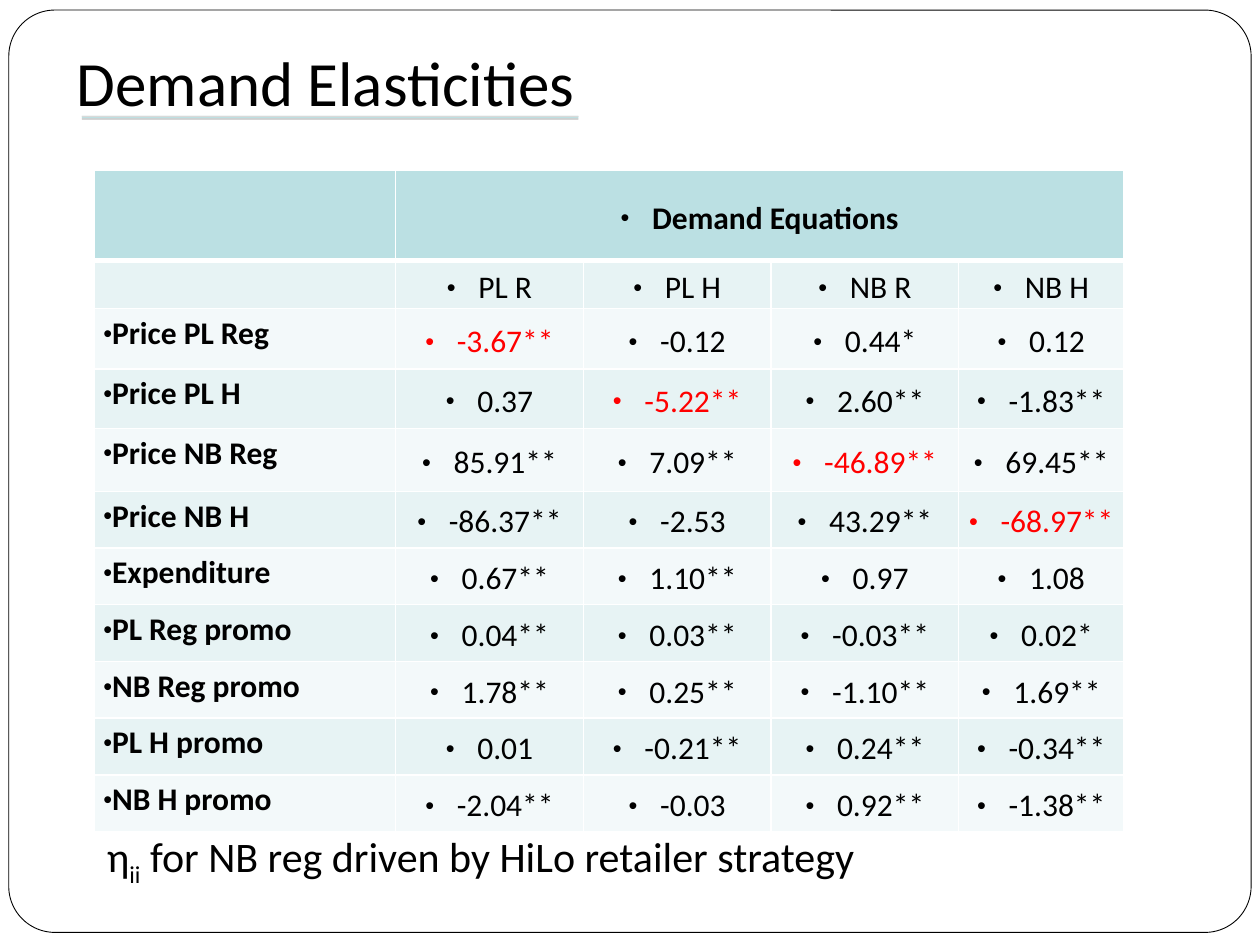
"""Build the Demand Elasticities slide."""
from lxml.etree import SubElement
from pptx import Presentation
from pptx.dml.color import RGBColor
from pptx.enum.shapes import MSO_SHAPE
from pptx.enum.text import MSO_ANCHOR, MSO_AUTO_SIZE, PP_ALIGN
from pptx.oxml.ns import qn
from pptx.util import Inches, Pt

COLORS = {"black": "000000", "white": "FFFFFF", "red": "FF0000", "head": "BBE0E3",
          "dark": "E7F3F4", "light": "F3F9FA", "gray": "D9D9D9", "shade": "BFBFBF"}
WIDTHS = [2.39, 1.49, 1.49, 1.49, 1.31]
HEIGHTS = [0.72, 0.38, 0.48, 0.47, 0.5] + [0.45] * 6
ROWS = [
    ["", "Demand Equations", "", "", ""],
    ["", "PL R", "PL H", "NB R", "NB H"],
    ["Price PL Reg", "-3.67**", "-0.12", "0.44*", "0.12"],
    ["Price PL H", "0.37", "-5.22**", "2.60**", "-1.83**"],
    ["Price NB Reg", "85.91**", "7.09**", "-46.89**", "69.45**"],
    ["Price NB H", "-86.37**", "-2.53", "43.29**", "-68.97**"],
    ["Expenditure", "0.67**", "1.10**", "0.97", "1.08"],
    ["PL Reg promo", "0.04**", "0.03**", "-0.03**", "0.02*"],
    ["NB Reg promo", "1.78**", "0.25**", "-1.10**", "1.69**"],
    ["PL H promo", "0.01", "-0.21**", "0.24**", "-0.34**"],
    ["NB H promo", "-2.04**", "-0.03", "0.92**", "-1.38**"],
]
BARS = [(0.92, 0.02, "head"), (0.92, 0.01, "gray"), (0.94, 0.01, "shade")]


def style(font, size, color="black", bold=False):
    font.name, font.size, font.bold = "Calibri", Pt(size), bold
    font.color.rgb = RGBColor.from_string(COLORS[color])


def block(kind, left, top, width, height, color):
    shape = slide.shapes.add_shape(kind, Inches(left), Inches(top), Inches(width), Inches(height))
    shape.shadow.inherit = False
    shape.fill.solid()
    shape.fill.fore_color.rgb = RGBColor.from_string(COLORS[color])
    shape.line.fill.background()
    return shape


deck = Presentation()
deck.slide_width, deck.slide_height = Inches(10), Inches(7.5)
slide = deck.slides.add_slide(deck.slide_layouts[5])

frame = block(MSO_SHAPE.ROUNDED_RECTANGLE, 0.07, 0.08, 9.86, 7.32, "white")
frame.adjustments[0] = 0.05
frame.line.color.rgb = RGBColor.from_string(COLORS["black"])
frame.line.width = Pt(0.5)
for top, height, color in BARS:
    block(MSO_SHAPE.RECTANGLE, 0.65, top, 3.94, height, color)

title = slide.shapes.title
title.left, title.top = Inches(0.51), Inches(-0.01)
title.width, title.height = Inches(8.21), Inches(1.25)
title.text_frame.text = "Demand Elasticities"
title.text_frame.vertical_anchor = MSO_ANCHOR.MIDDLE
para = title.text_frame.paragraphs[0]
para.alignment, para.line_spacing = PP_ALIGN.LEFT, 1.1
style(para.runs[0].font, 36)
slide.shapes.element.append(title.element)

table = slide.shapes.add_table(len(ROWS), len(WIDTHS), Inches(0.75), Inches(1.35),
                               Inches(sum(WIDTHS)), Inches(sum(HEIGHTS))).table
for col, width in zip(table.columns, WIDTHS):
    col.width = Inches(width)
for row, height in zip(table.rows, HEIGHTS):
    row.height = Inches(height)
table.cell(0, 1).merge(table.cell(0, 4))

for r, texts in enumerate(ROWS):
    for c, text in enumerate(texts):
        cell = table.cell(r, c)
        value = r > 1 and c > 0
        cell.margin_left = cell.margin_right = Inches(0.01 if value else 0.07)
        cell.margin_top = Inches(0.01 if value else 0)
        cell.margin_bottom = 0
        cell.vertical_anchor = MSO_ANCHOR.MIDDLE if c else MSO_ANCHOR.TOP
        props = cell._tc.get_or_add_tcPr()
        for side in ("L", "R", "T", "B"):
            thick = (r == 0 and side == "B") or (r == 1 and side == "T")
            edge = SubElement(props, qn(f"a:ln{side}"), w=str(Pt(3 if thick else 1)))
            SubElement(SubElement(edge, qn("a:solidFill")), qn("a:srgbClr"), val=COLORS["white"])
        cell.fill.solid()
        shade = "head" if r == 0 else "dark" if r % 2 else "light"
        cell.fill.fore_color.rgb = RGBColor.from_string(COLORS[shade])
        para = cell.text_frame.paragraphs[0]
        style(para.font, 18)
        if not text:
            continue
        para.text = text
        para.alignment = PP_ALIGN.CENTER if c else PP_ALIGN.LEFT
        para.line_spacing = 1.1 if value else 1.15
        if value:
            para.space_before = para.space_after = Pt(3.6)
        indent = Inches(0.25 if c else 0)
        marks = para._p.get_or_add_pPr()
        marks.set("marL", str(indent))
        marks.set("indent", str(-indent))
        bullet = [("buSzPct", "val", "80000"), ("buFont", "typeface", "Arial"), ("buChar", "char", "•")]
        for tag, key, val in bullet:
            marks.insert_element_before(marks.makeelement(qn(f"a:{tag}"), {key: val}),
                                        "a:tabLst", "a:defRPr", "a:extLst")
        own = value and c == r - 1
        style(para.runs[0].font, 18, "red" if own else "black", r == 0 or c == 0)

note = slide.shapes.add_textbox(Inches(0.75), Inches(6.5), Inches(6.2), Inches(0.52)).text_frame
note.word_wrap = False
note.auto_size = MSO_AUTO_SIZE.SHAPE_TO_FIT_TEXT
para = note.paragraphs[0]
para.line_spacing = 1.1
para.space_before = para.space_after = Pt(4.8)
for text in ("η", "ii", " for NB reg driven by HiLo retailer strategy"):
    run = para.add_run()
    run.text = text
    style(run.font, 24)
    if text == "ii":
        run.font._element.set("baseline", "-25000")

deck.save("out.pptx")
